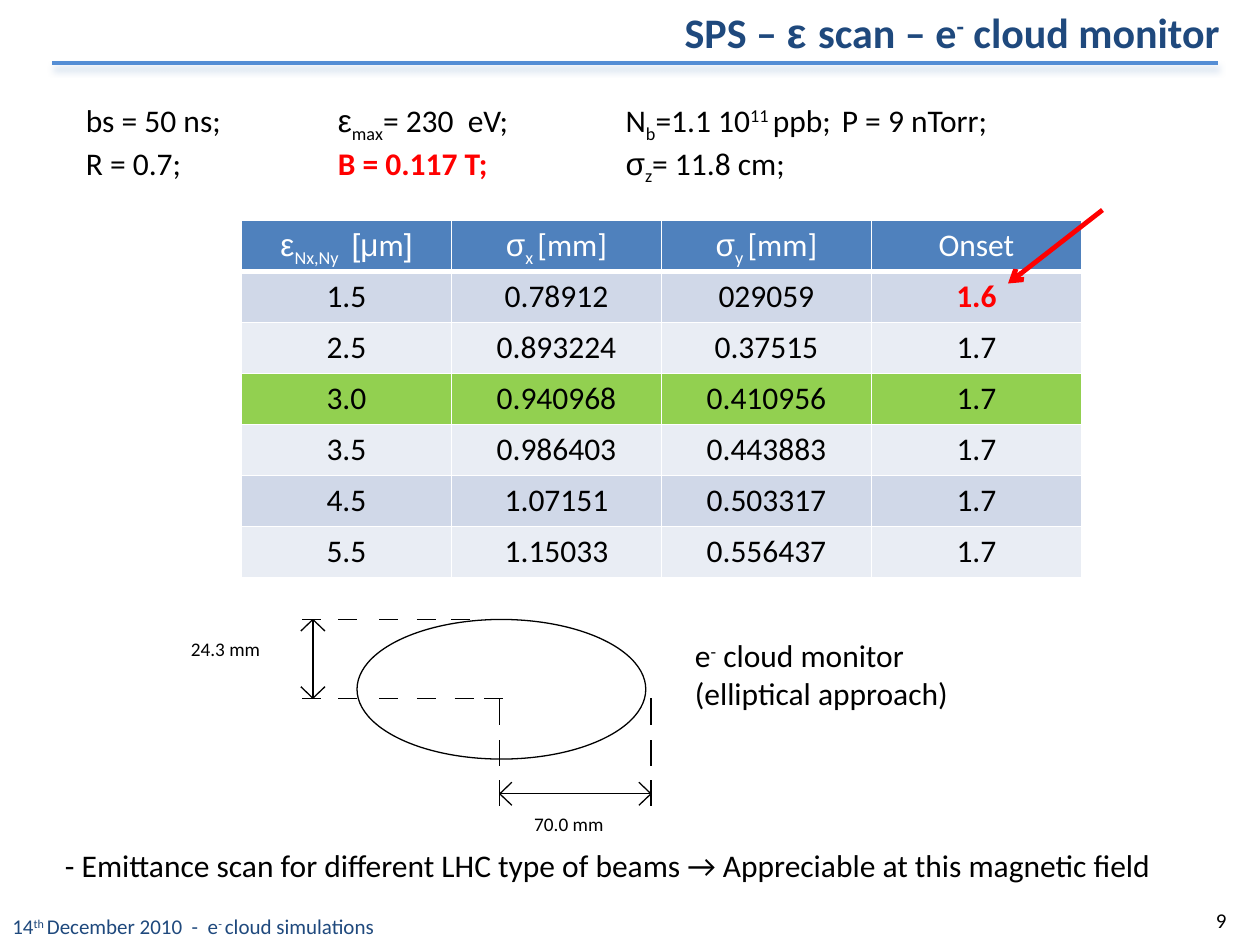
from lxml import etree
from pptx import Presentation
from pptx import util as u
from pptx.dml.color import RGBColor
from pptx.enum import shapes, text
from pptx.oxml import ns

BLACK, WHITE, RED, NAVY = "000000", "FFFFFF", "FF0000", "1F497D"
COLUMNS = 120  # the page is 120 columns by 90 rows of square cells


def color(value):
    return RGBColor.from_string(value)


def sup(words):
    return words, {"base": 30}


def sub(words):
    return words, {"base": -25}


def greek(words):
    return words, {"font": "Arial"}


def add_node(parent, tag, **attributes):
    node = etree.SubElement(parent, ns.qn(tag))
    for name, value in attributes.items():
        node.set(name, str(value))
    return node


class SlideBuilder:
    """Holds the style and the current slide; lengths are grid columns and rows."""

    font = "Calibri"
    size = 18

    def __init__(self, deck):
        self.cell = deck.slide_width / COLUMNS
        self.page = deck.slides.add_slide(deck.slide_layouts[5])
        self.target = self.page.shapes

    def grid(self, *lengths):
        return [u.Emu(round(length * self.cell)) for length in lengths]

    def add_spans(self, para, spans, size=None, ink=BLACK, bold=False):
        for span in spans:
            words, style = (span, {}) if isinstance(span, str) else span
            run = para.add_run()
            run.text = words
            run.font.name = style.get("font", self.font)
            run.font.size = u.Pt(size or self.size)
            run.font.bold = style.get("bold", bold)
            run.font.color.rgb = color(style.get("ink", ink))
            if "base" in style:
                run.font._element.set("baseline", str(style["base"] * 1000))

    def title(self, place, spans, **style):
        box = self.page.shapes.title
        box.left, box.top, box.width, box.height = self.grid(*place)
        frame = box.text_frame
        frame.auto_size = text.MSO_AUTO_SIZE.NONE
        frame.vertical_anchor = text.MSO_ANCHOR.TOP
        frame.paragraphs[0].alignment = text.PP_ALIGN.LEFT
        self.add_spans(frame.paragraphs[0], spans, **style)

    def text(self, place, lines, align=text.PP_ALIGN.LEFT,
             anchor=text.MSO_ANCHOR.TOP, tabs=(), **style):
        frame = self.target.add_textbox(*self.grid(*place)).text_frame
        frame.word_wrap = True
        frame.vertical_anchor = anchor
        for index, spans in enumerate(lines):
            para = frame.add_paragraph() if index else frame.paragraphs[0]
            para.alignment = align
            if tabs:
                stops = add_node(para._p.get_or_add_pPr(), "a:tabLst")
                for stop in self.grid(*tabs):
                    add_node(stops, "a:tab", pos=int(stop), algn="l")
            self.add_spans(para, spans, **style)

    def line(self, start, end, ink=BLACK, width=0.75, arrow=False, shadow=None):
        line = self.target.add_connector(
            shapes.MSO_CONNECTOR.STRAIGHT, *self.grid(*start, *end))
        line.line.color.rgb = color(ink)
        line.line.width = u.Pt(width)
        if arrow:
            add_node(line.line._get_or_add_ln(), "a:tailEnd", type="arrow")
        effects = add_node(line._element.spPr, "a:effectLst")
        if shadow:
            outer = add_node(effects, "a:outerShdw", blurRad=int(u.Pt(4)),
                             dist=int(u.Pt(3)), dir=90 * 60000, rotWithShape=0)
            add_node(add_node(outer, "a:srgbClr", val=shadow), "a:alpha", val=40000)

    def ellipse(self, place):
        oval = self.target.add_shape(shapes.MSO_SHAPE.OVAL, *self.grid(*place))
        oval.shadow.inherit = False
        oval.fill.solid()
        oval.fill.fore_color.rgb = color(WHITE)
        oval.line.color.rgb = color(BLACK)
        oval.line.width = u.Pt(0.75)

    def tip(self, x, y, across=0, down=0):
        """Open arrow tip whose strokes run back in the given direction."""
        for side in (-1, 1):
            self.line((x, y), (x + (across or side) * 1.15, y + (down or side) * 1.1))

    def table(self, place, rows, fills):
        grid = self.target.add_table(len(rows), len(rows[0]), *self.grid(*place)).table
        for r, row in enumerate(rows):
            for c, spans in enumerate(row):
                cell = grid.cell(r, c)
                cell.margin_left = cell.margin_right = u.Inches(0.07)
                cell.margin_top = cell.margin_bottom = 0
                for side in "LRTB":
                    heavy = (r, side) in ((0, "B"), (1, "T"))
                    edge = add_node(cell._tc.get_or_add_tcPr(), f"a:ln{side}",
                                    w=int(u.Pt(3 if heavy else 1)))
                    add_node(add_node(edge, "a:solidFill"), "a:srgbClr", val=WHITE)
                cell.fill.solid()
                cell.fill.fore_color.rgb = color(fills[r])
                para = cell.text_frame.paragraphs[0]
                para.alignment = text.PP_ALIGN.CENTER
                para.line_spacing = 1.15
                self.add_spans(para, spans, ink=BLACK if r else WHITE)


def draw_monitor(slide):
    """Elliptical chamber with its half-height and half-width dimensions."""
    slide.target = slide.page.shapes.add_group_shape().shapes
    top, middle, base = 59, 66.5, 75.6
    gauge, center, edge = 29.8, 47.6, 62
    slide.ellipse((34, top, 27.5, 13.3))

    # Broken guide lines
    shared = (28.8, 32.2, 36.1, 39.7)
    for y, starts in ((top, shared + (43,)), (middle, shared + (43.3, 46.1))):
        for x in starts:
            slide.line((x, y), (x + 1.8, y))
    for x in (center, edge):
        for y in (middle, 70.5, 74.3):
            slide.line((x, y), (x, y + 2.5))

    # Dimension arrows
    slide.line((gauge, top), (gauge, middle))
    slide.line((center, base), (edge, base))
    slide.tip(gauge, top, down=1)
    slide.tip(gauge, middle, down=-1)
    slide.tip(center, base, across=1)
    slide.tip(edge, base, across=-1)
    for x, y, label in ((17, 60.1, "24.3 mm"), (49.7, 76.8, "70.0 mm")):
        slide.text((x, y, 11.8, 4.2), [[label]], size=11)
    slide.target = slide.page.shapes


def main():
    deck = Presentation()
    deck.slide_width, deck.slide_height = u.Inches(10), u.Inches(7.5)
    slide = SlideBuilder(deck)

    # Header
    slide.title((64, 0, 55, 6),
                ["SPS – ", greek("ε "), "scan – e", sup("-"), " cloud monitor"],
                size=24, ink=NAVY, bold=True)
    slide.line((5, 6), (116, 6), ink="558ED5", width=2.75, shadow="95B3D7")

    # Beam parameters
    slide.text((7, 9, 109, 12), [
        ["bs = 50 ns;\t", greek("ε"), sub("max"), "= 230  eV;\tN", sub("b"),
         "=1.1 10", sup("11 "), "ppb;\tP = 9 nTorr;"],
        ["R = 0.7;\t", ("B = 0.117 T;\t", {"ink": RED, "bold": True}),
         greek("σ"), sub("z"), "= 11.8 cm;"],
    ], tabs=(24, 51.4, 72))

    # Scan results
    header = [[greek("ε"), sub("Nx,Ny "), greek(" [μ"), "m", greek("]")],
              [greek("σ"), sub("x "), "[mm]"],
              [greek("σ"), sub("y "), "[mm]"],
              ["Onset"]]
    results = [("1.5", "0.78912", "029059", ("1.6", {"ink": RED, "bold": True})),
               ("2.5", "0.893224", "0.37515", "1.7"),
               ("3.0", "0.940968", "0.410956", "1.7"),
               ("3.5", "0.986403", "0.443883", "1.7"),
               ("4.5", "1.07151", "0.503317", "1.7"),
               ("5.5", "1.15033", "0.556437", "1.7")]
    bands = ["D0D8E8", "E9EDF4"] * 3
    bands[2] = "92D050"  # highlighted emittance
    slide.table((23, 21, 80, 34),
                [header] + [[[value] for value in row] for row in results],
                ["4F81BD"] + bands)

    # Monitor geometry
    draw_monitor(slide)
    slide.text((65, 60, 33, 8.5),
               [["e", sup("-"), " cloud monitor (elliptical approach)"]])

    # Conclusion and footer
    slide.text((5, 80, 111, 4.8), [["- Emittance scan for different LHC type of beams "
                                    "→ Appreciable at this magnetic field"]])
    slide.text((0, 86.4, 113, 3.6),
               [["14", sup("th "), "December 2010  -  e", sup("- "), "cloud simulations"]],
               size=12, ink=NAVY)
    slide.text((90, 85.2, 28, 4.8), [["9"]], size=12,
               align=text.PP_ALIGN.RIGHT, anchor=text.MSO_ANCHOR.MIDDLE)

    # Pointer to the lowest onset
    slide.line((105, 20), (96, 27), ink=RED, width=2.75, arrow=True)
    deck.save("out.pptx")


if __name__ == "__main__":
    main()
